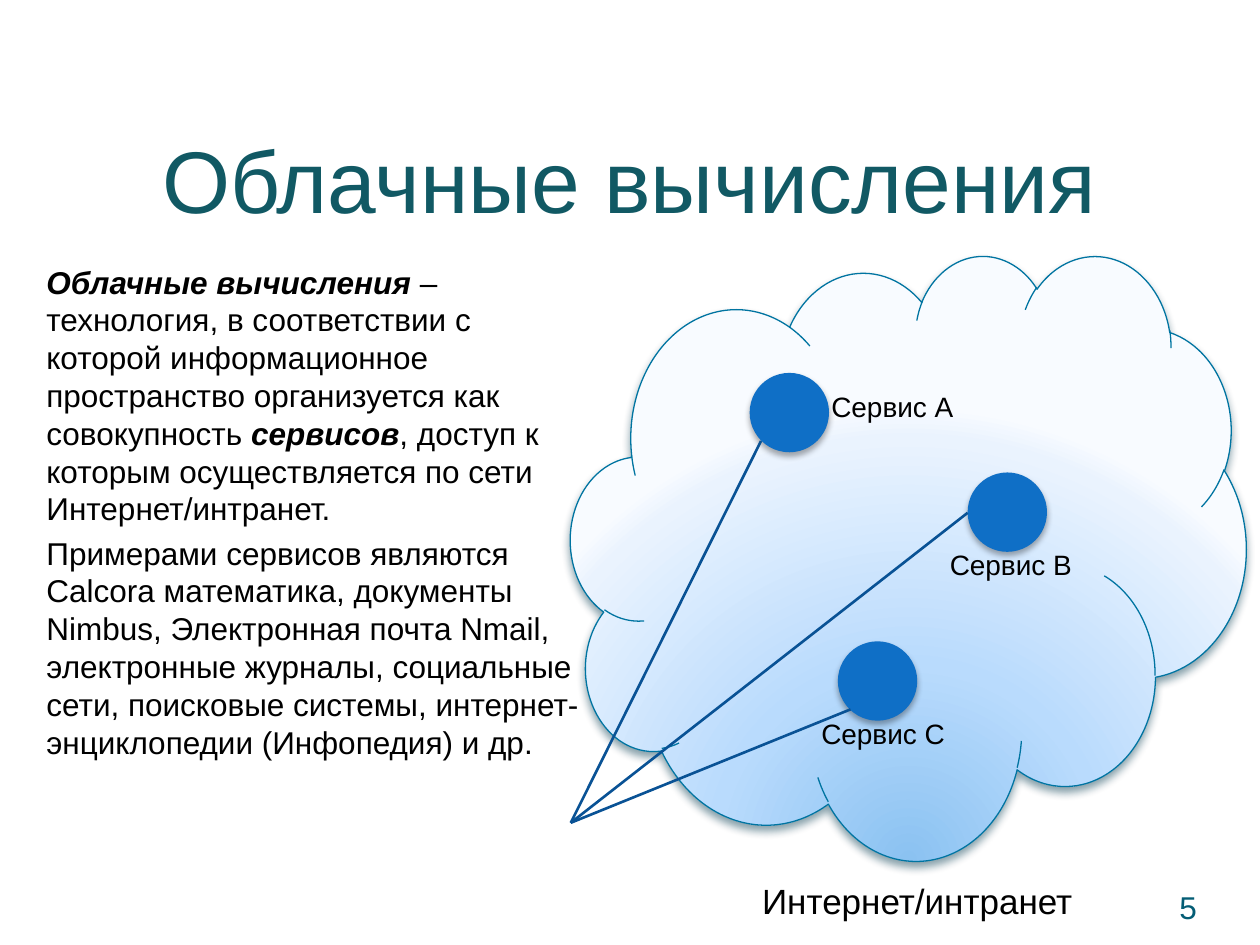
"""Build the cloud computing slide: a definition on the left, a cloud of services on the right."""
from dataclasses import dataclass

from lxml import etree
from pptx import Presentation
from pptx.dml.color import RGBColor
from pptx.enum.shapes import MSO_CONNECTOR, MSO_SHAPE
from pptx.enum.text import MSO_ANCHOR, PP_ALIGN
from pptx.oxml import parse_xml
from pptx.oxml.ns import nsdecls, qn
from pptx.util import Inches, Pt


@dataclass(frozen=True)
class Theme:
    font: str = "Arial"
    title: str = "115964"
    text: str = "000000"
    number: str = "045D75"
    service: str = "0F6FC6"
    link: str = "095295"
    cloud_line: str = "0074A1"
    cloud_shadow: str = "00374C"
    cloud_stops: tuple = ((0, "8BC2F1"), (43, "B9DBFD"), (93, "EAF3FE"), (100, "F8FBFF"))
    title_size: int = 50
    body_size: int = 18
    caption_size: int = 20
    label_size: int = 16


def add_text(page, place, paragraphs, size, color, align=PP_ALIGN.LEFT,
             anchor=MSO_ANCHOR.TOP, margins=(0.1, 0.05, 0.1, 0.05)):
    box = page.shapes.add_textbox(*map(Inches, place))
    frame = box.text_frame
    frame.word_wrap = True
    frame.vertical_anchor = anchor
    (frame.margin_left, frame.margin_top,
     frame.margin_right, frame.margin_bottom) = map(Inches, margins)
    for index, runs in enumerate(paragraphs):
        para = frame.add_paragraph() if index else frame.paragraphs[0]
        para.alignment = align
        para.space_before = Pt(size * 0.2 if index else 0)
        para.font.name = theme.font
        para.font.size = Pt(size)
        para.font.color.rgb = RGBColor.from_string(color)
        for text, strong in runs:
            span = para.add_run()
            span.text = text
            if strong:
                span.font.bold = span.font.italic = True


def add_shadow(shape, color, opacity, blur, distance):
    shape.shadow.inherit = False
    effects = shape._element.spPr.find(qn("a:effectLst"))
    effects.append(parse_xml(
        f'<a:outerShdw {nsdecls("a")} blurRad="{Pt(blur)}" dist="{Pt(distance)}" '
        f'dir="5400000" rotWithShape="0"><a:srgbClr val="{color}">'
        f'<a:alpha val="{opacity * 1000}"/></a:srgbClr></a:outerShdw>'))


theme = Theme()
deck = Presentation()
deck.slide_width, deck.slide_height = Inches(10), Inches(7.5)
page = deck.slides.add_slide(deck.slide_layouts[6])

cloud = page.shapes.add_shape(
    MSO_SHAPE.CLOUD, Inches(4.53), Inches(2.02), Inches(5.36), Inches(4.8))
cloud.line.color.rgb = RGBColor.from_string(theme.cloud_line)
cloud.line.width = Pt(0.75)
cloud.fill.gradient()
stops = "".join(f'<a:gs pos="{position * 1000}"><a:srgbClr val="{color}"/></a:gs>'
                for position, color in theme.cloud_stops)
properties = cloud._element.spPr
properties.replace(properties.find(qn("a:gradFill")), parse_xml(
    f'<a:gradFill {nsdecls("a")} rotWithShape="1"><a:gsLst>{stops}</a:gsLst>'
    '<a:path path="circle"><a:fillToRect l="50000" t="130000" r="50000" b="-30000"/>'
    '</a:path></a:gradFill>'))
add_shadow(cloud, theme.cloud_shadow, 48, 4.5, 3)

add_text(page, (0.5, 0.77, 9, 1.25), [[("Облачные вычисления", False)]],
         theme.title_size, theme.title, PP_ALIGN.CENTER, MSO_ANCHOR.MIDDLE, (0, 0.05, 0, 0))

definition = [
    ("Облачные вычисления", True),
    (" – технология, в соответствии с которой информационное пространство "
     "организуется как совокупность ", False),
    ("сервисов", True),
    (", доступ к которым осуществляется по сети Интернет/интранет.", False),
]
examples = [
    ("Примерами сервисов являются Calcora математика, документы Nimbus, "
     "Электронная почта Nmail, электронные журналы, социальные сети, поисковые "
     "системы, интернет-энциклопедии (Инфопедия) и др.", False),
]
add_text(page, (0.27, 2.01, 4.49, 4.1), [definition, examples],
         theme.body_size, theme.text, anchor=MSO_ANCHOR.MIDDLE)

add_text(page, (8.67, 6.95, 0.83, 0.4), [[("5", False)]], theme.body_size, theme.number,
         PP_ALIGN.RIGHT, MSO_ANCHOR.BOTTOM, (0, 0, 0, 0))
add_text(page, (5.95, 6.93, 2.76, 0.44), [[("Интернет/интранет", False)]],
         theme.caption_size, theme.text)

client = (4.53, 6.53)
diameter = 0.63
services = [
    ("Сервис A", (5.95, 2.96), (6.04, 3.5), (6.5, 3.04)),
    ("Сервис B", (7.68, 3.75), (7.68, 4.07), (7.44, 4.3)),
    ("Сервис С", (6.65, 5.09), (6.75, 5.63), (6.42, 5.64)),
]
for name, corner, contact, label in services:
    circle = page.shapes.add_shape(
        MSO_SHAPE.OVAL, *map(Inches, (*corner, diameter, diameter)))
    circle.fill.solid()
    circle.fill.fore_color.rgb = RGBColor.from_string(theme.service)
    circle.line.fill.background()
    add_shadow(circle, theme.text, 32, 3.5, 2.2)

    link = page.shapes.add_connector(
        MSO_CONNECTOR.STRAIGHT, *map(Inches, (*client, *contact)))
    link.line.color.rgb = RGBColor.from_string(theme.link)
    link.line.width = Pt(1.5)
    etree.SubElement(link._element.spPr, qn("a:effectLst"))

    add_text(page, (*label, 1.34, 0.37), [[(name, False)]], theme.label_size, theme.text)

deck.save("out.pptx")
